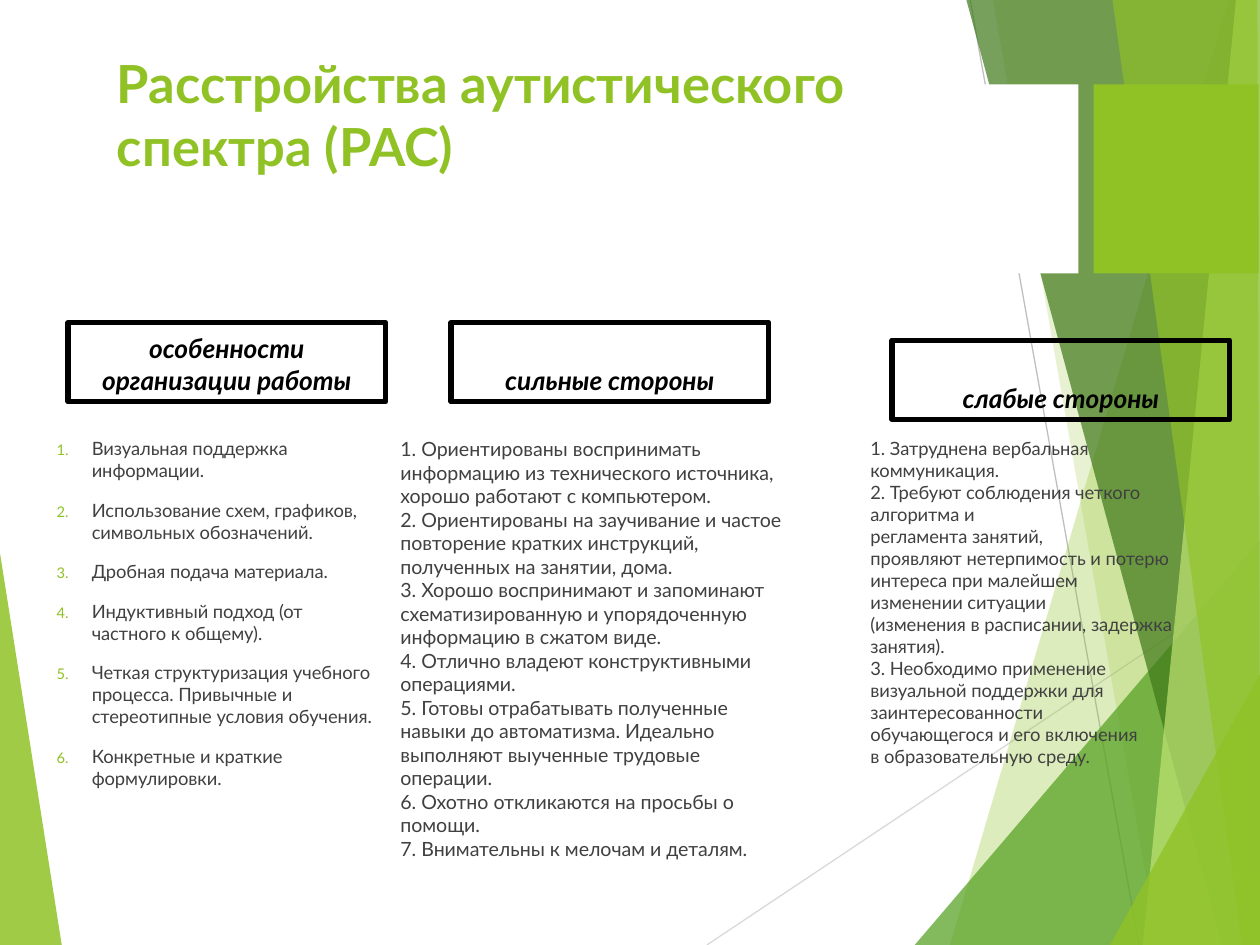
from typing import NamedTuple

from lxml import etree
from pptx import Presentation
from pptx.dml.color import RGBColor
from pptx.enum import shapes, text
from pptx.oxml import ns
from pptx.util import Inches, Pt

LIME = RGBColor(0x90, 0xC2, 0x26)
GREEN = RGBColor(0x54, 0xA0, 0x21)
DARK_GREEN = RGBColor(0x3F, 0x78, 0x19)
PALE_GREEN = RGBColor(0xC0, 0xE4, 0x74)
WHITE = RGBColor(0xFF, 0xFF, 0xFF)
BLACK = RGBColor(0, 0, 0)
TEXT_GRAY = RGBColor(0x40, 0x40, 0x40)
LIGHT_GRAY = RGBColor(0xD9, 0xD9, 0xD9)
MID_GRAY = RGBColor(0xBF, 0xBF, 0xBF)

W, H = 10, 7.5
FONT = "Lato"
TITLE_FORMAT = {"name": FONT, "size": Pt(30), "bold": True}
HEADING_FORMAT = {"name": FONT, "size": Pt(15), "bold": True, "italic": True}


class Box(NamedTuple):
    left: float
    top: float
    width: float
    height: float


class Facet(NamedTuple):
    points: list[tuple[float, float]]
    color: RGBColor
    opacity: int


class Ray(NamedTuple):
    start: tuple[float, float]
    end: tuple[float, float]
    color: RGBColor


class Column(NamedTuple):
    heading: str
    heading_box: Box
    body_box: Box
    size: float
    numbered: bool
    lines: list[str]


LEFT_FACET = Facet([(0, 4.39), (0.49, H), (0, H)], LIME, 85)
RAYS = [
    Ray((5.61, H), (W, 4.57), LIGHT_GRAY),
    Ray((7.7, 0), (9.04, H), MID_GRAY),
]
RIGHT_FACETS = [
    Facet([(9.75, 0), (7.54, H), (W, H), (W, 0)], LIME, 30),
    Facet([(7.88, 0), (9.19, H), (W, H), (W, 0)], LIME, 20),
    Facet([(7.26, H), (W, 4.29), (W, H)], GREEN, 72),
    Facet([(7.67, 0), (9.7, H), (W, H), (W, 0)], DARK_GREEN, 70),
    Facet([(9.81, 0), (9.07, H), (W, H), (W, 0)], PALE_GREEN, 70),
    Facet([(8.83, 0), (9.86, H), (W, H), (9.98, 0)], LIME, 65),
    Facet([(8.81, H), (W, 5.35), (W, H)], LIME, 80),
]
BANDS = [(Box(0, 0.67, 8.56, 1.5), WHITE), (Box(8.68, 0.67, 1.31, 1.5), LIME)]

COLUMNS = [
    Column("особенности организации работы", Box(0.54, 2.56, 2.52, 0.63),
           Box(0.35, 3.42, 2.71, 3.25), 10.5, True, [
        "Визуальная поддержка информации.",
        "Использование схем, графиков, символьных обозначений.",
        "Дробная подача материала.",
        "Индуктивный подход (от частного к общему).",
        "Четкая структуризация учебного процесса. Привычные и "
        "стереотипные условия обучения.",
        "Конкретные и краткие формулировки.",
    ]),
    Column("сильные стороны", Box(3.58, 2.56, 2.52, 0.63),
           Box(3.08, 3.42, 3.34, 3.25), 11.2, False, [
        "1. Ориентированы воспринимать информацию из технического "
        "источника, хорошо работают с компьютером.",
        "2. Ориентированы на заучивание и частое повторение кратких "
        "инструкций, полученных на занятии, дома.",
        "3. Хорошо воспринимают и запоминают",
        "схематизированную и упорядоченную информацию в сжатом виде.",
        "4. Отлично владеют конструктивными операциями.",
        "5. Готовы отрабатывать полученные навыки до автоматизма. "
        "Идеально выполняют выученные трудовые операции.",
        "6. Охотно откликаются на просьбы о помощи.",
        "7. Внимательны к мелочам и деталям.",
    ]),
    Column("слабые стороны", Box(7.08, 2.7, 2.68, 0.63),
           Box(6.81, 3.42, 3, 3.09), 10.5, False, [
        "1. Затруднена вербальная",
        "коммуникация.",
        "2. Требуют соблюдения четкого алгоритма и",
        "регламента занятий,",
        "проявляют нетерпимость и потерю",
        "интереса при малейшем",
        "изменении ситуации",
        "(изменения в расписании, задержка занятия).",
        "3. Необходимо применение",
        "визуальной поддержки для",
        "заинтересованности",
        "обучающегося и его включения",
        "в образовательную среду.",
    ]),
]


def add_facet(s, facet: Facet) -> None:
    points = [(Inches(x), Inches(y)) for x, y in facet.points]
    builder = s.shapes.build_freeform(*points[0])
    builder.add_line_segments(points[1:], close=True)
    sp = builder.convert_to_shape()
    sp.shadow.inherit = False
    sp.line.fill.background()
    sp.fill.solid()
    sp.fill.fore_color.rgb = facet.color
    color = sp.fill._xPr.find(".//" + ns.qn("a:srgbClr"))
    etree.SubElement(color, ns.qn("a:alpha"), val=str(facet.opacity * 1000))


def add_ray(s, ray: Ray) -> None:
    ends = [Inches(v) for v in (*ray.start, *ray.end)]
    sp = s.shapes.add_connector(shapes.MSO_CONNECTOR.STRAIGHT, *ends)
    sp.line.color.rgb = ray.color
    sp.line.width = Pt(0.75)
    etree.SubElement(sp._element.spPr, ns.qn("a:effectLst"))


def add_rect(s, box: Box):
    sp = s.shapes.add_shape(shapes.MSO_SHAPE.RECTANGLE, *map(Inches, box))
    sp.shadow.inherit = False
    return sp


def add_textbox(s, box: Box):
    tf = s.shapes.add_textbox(*map(Inches, box)).text_frame
    tf.word_wrap = True
    return tf


def write(p, words: str, color: RGBColor, font_format: dict) -> None:
    r = p.add_run()
    r.text = words
    r.font.color.rgb = color
    for name, value in font_format.items():
        setattr(r.font, name, value)


def add_number(p) -> None:
    pPr = p._p.get_or_add_pPr()
    pPr.set("marL", str(Inches(0.28)))
    pPr.set("indent", str(Inches(-0.28)))
    color = etree.SubElement(pPr, ns.qn("a:buClr"))
    etree.SubElement(color, ns.qn("a:srgbClr"), val=str(LIME))
    etree.SubElement(pPr, ns.qn("a:buSzPct"), val="80000")
    etree.SubElement(pPr, ns.qn("a:buAutoNum"), type="arabicPeriod")


def add_column(s, column: Column) -> None:
    # Framed heading
    sp = add_rect(s, column.heading_box)
    sp.fill.background()
    sp.line.color.rgb = BLACK
    sp.line.width = Pt(3)
    tf = sp.text_frame
    tf.word_wrap = True
    tf.vertical_anchor = text.MSO_ANCHOR.BOTTOM
    p = tf.paragraphs[0]
    p.alignment = text.PP_ALIGN.CENTER
    write(p, column.heading, BLACK, HEADING_FORMAT)

    # Body text
    tf = add_textbox(s, column.body_box)
    for i, line in enumerate(column.lines):
        p = tf.add_paragraph() if i else tf.paragraphs[0]
        if column.numbered:
            add_number(p)
            p.space_before = Pt(10 if i else 0)
        write(p, line, TEXT_GRAY, {"name": FONT, "size": Pt(column.size)})


def main() -> None:
    prs = Presentation()
    prs.slide_width, prs.slide_height = Inches(W), Inches(H)
    s = prs.slides.add_slide(prs.slide_layouts[6])

    # Faceted background
    add_facet(s, LEFT_FACET)
    for ray in RAYS:
        add_ray(s, ray)
    for facet in RIGHT_FACETS:
        add_facet(s, facet)
    for box, color in BANDS:
        sp = add_rect(s, box)
        sp.fill.solid()
        sp.fill.fore_color.rgb = color
        sp.line.fill.background()

    # Title
    tf = add_textbox(s, Box(0.83, 0.36, 6.61, 1.34))
    write(tf.paragraphs[0], "Расстройства аутистического спектра (РАС)",
          LIME, TITLE_FORMAT)

    # Three columns
    for column in COLUMNS:
        add_column(s, column)

    prs.save("out.pptx")


if __name__ == "__main__":
    main()
